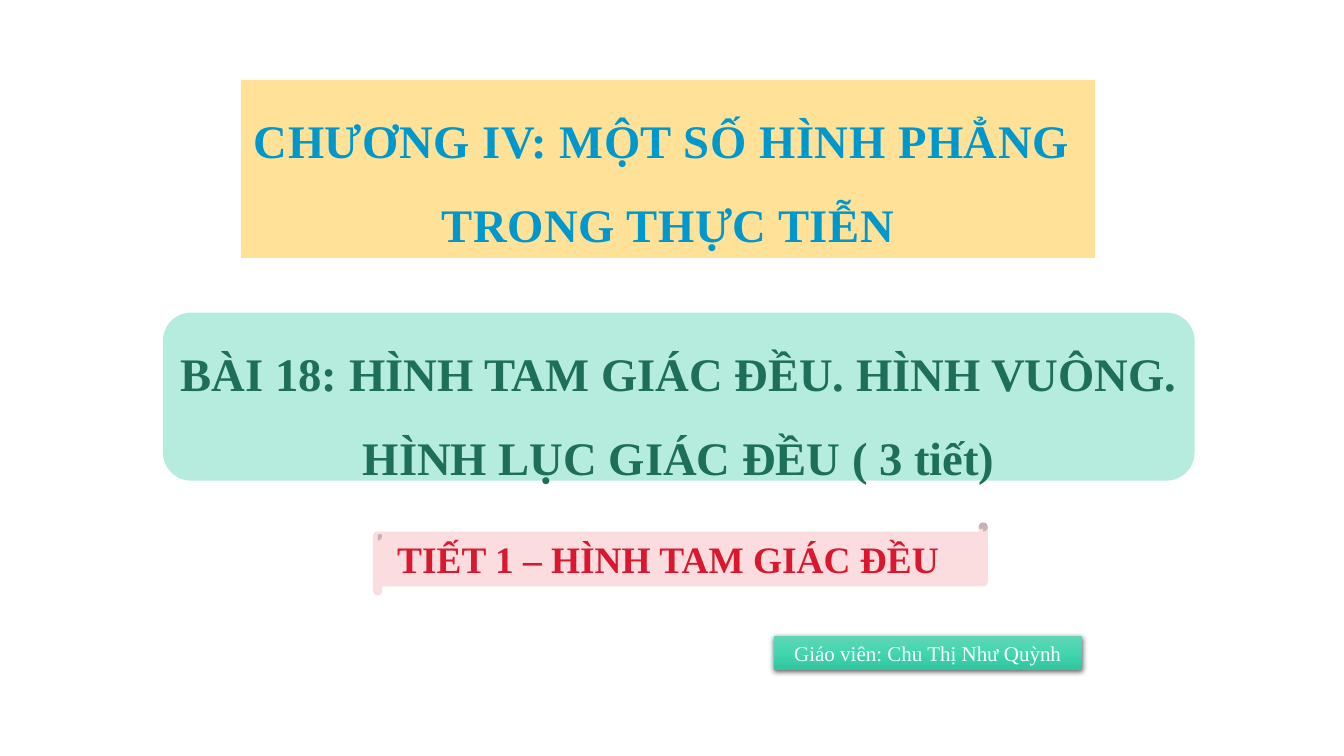
import copy

import lxml.etree
import pptx
import pptx.dml.color
import pptx.enum.shapes
import pptx.enum.text
import pptx.oxml.ns
import pptx.util

Pt = pptx.util.Pt
SHAPES = pptx.enum.shapes.MSO_SHAPE
ALIGN = pptx.enum.text.PP_ALIGN
FONT = "Times New Roman"
COLOURS = {
    "chapter_fill": "FFE298", "chapter_text": "0097CC",
    "lesson_fill": "B6ECDE", "lesson_text": "1D6F5A",
    "period_fill": "FBDDE0", "period_text": "DA172C",
    "teacher_top": "64D5B6", "teacher_middle": "41D6B0",
    "teacher_bottom": "32C6A0", "teacher_text": "FFFFFF",
    "shadow": "000000",
}


def colour(name):
    return pptx.dml.color.RGBColor.from_string(COLOURS[name])


def add_panel(page, kind, box, fill=None):
    panel = page.shapes.add_shape(kind, *map(Pt, box))
    panel.shadow.inherit = False
    panel.line.fill.background()
    if fill:
        panel.fill.solid()
        panel.fill.fore_color.rgb = colour(fill)
    return panel


def write(shape, lines, size, ink, bold=True, align=ALIGN.CENTER,
          line_spacing=None, wrap=True, tracking=None):
    """Fill the shape with one paragraph per line; tracking is in points."""
    frame = shape.text_frame
    frame.word_wrap = wrap
    frame.auto_size = pptx.enum.text.MSO_AUTO_SIZE.SHAPE_TO_FIT_TEXT
    for index, line in enumerate(lines):
        para = frame.add_paragraph() if index else frame.paragraphs[0]
        para.alignment = align
        para.line_spacing = line_spacing
        span = para.add_run()
        span.text = line
        span.font.name = FONT
        span.font.size = Pt(size)
        span.font.bold = bold
        span.font.color.rgb = colour(ink)
        if tracking:
            span.font._element.set("spc", str(round(tracking * 100)))


def add_lesson(page, box):
    add_panel(page, SHAPES.ROUNDED_RECTANGLE, box, "lesson_fill")
    label = page.shapes.add_textbox(*map(Pt, box))
    write(label, ["BÀI 18: HÌNH TAM GIÁC ĐỀU. HÌNH VUÔNG. HÌNH LỤC GIÁC ĐỀU ( 3 tiết)"],
          40, "lesson_text", line_spacing=1.5)


def add_period(page, box):
    left, top, width, height = box
    add_panel(page, SHAPES.HORIZONTAL_SCROLL, box, "period_fill")
    label = page.shapes.add_textbox(Pt(left + 13.7), Pt(top + 8.6),
                                    Pt(width - 26), Pt(height - 16.6))
    write(label, ["TIẾT 1 – HÌNH TAM GIÁC ĐỀU"], 32, "period_text", align=ALIGN.LEFT)


def add_chapter(page, box):
    add_panel(page, SHAPES.RECTANGLE, box, "chapter_fill")
    label = page.shapes.add_textbox(*map(Pt, box))
    write(label, ["CHƯƠNG IV: MỘT SỐ HÌNH PHẲNG ", "TRONG THỰC TIỄN"],
          40, "chapter_text", line_spacing=1.5, wrap=False, tracking=0.5)


def add_teacher(page, box):
    plate = add_panel(page, SHAPES.RECTANGLE, box)
    shade_down(plate, ["teacher_top", "teacher_middle", "teacher_bottom"])
    drop_shadow(plate)
    write(plate, ["Giáo viên: Chu Thị Như Quỳnh"], 18, "teacher_text", bold=False)


def shade_down(shape, names):
    """Blend three evenly spaced colours from top to bottom."""
    shape.fill.gradient()
    shape.fill.gradient_angle = 270
    stop_list = shape._element.spPr.find(".//" + pptx.oxml.ns.qn("a:gsLst"))
    stop_list.insert(1, copy.deepcopy(stop_list[0]))
    for index, (stop, name) in enumerate(zip(shape.fill.gradient_stops, names)):
        stop.position = index / (len(names) - 1)
        stop.color.rgb = colour(name)


def drop_shadow(shape):
    qn = pptx.oxml.ns.qn
    effects = shape._element.spPr.find(qn("a:effectLst"))
    shadow = lxml.etree.SubElement(
        effects, qn("a:outerShdw"), blurRad=str(Pt(4.5)), dist=str(Pt(1.5)),
        dir="5400000", algn="ctr", rotWithShape="0")
    tint = lxml.etree.SubElement(shadow, qn("a:srgbClr"), val=COLOURS["shadow"])
    lxml.etree.SubElement(tint, qn("a:alpha"), val="63000")


def main():
    deck = pptx.Presentation()
    deck.slide_width, deck.slide_height = Pt(1152), Pt(648)
    page = deck.slides.add_slide(deck.slide_layouts[6])
    add_lesson(page, (139.7, 268, 884.2, 144))
    add_period(page, (319.7, 447.8, 527, 62.6))
    add_chapter(page, (206.6, 68.4, 732.2, 152.6))
    add_teacher(page, (663.1, 545, 264.2, 29))
    deck.save("out.pptx")


if __name__ == "__main__":
    main()
